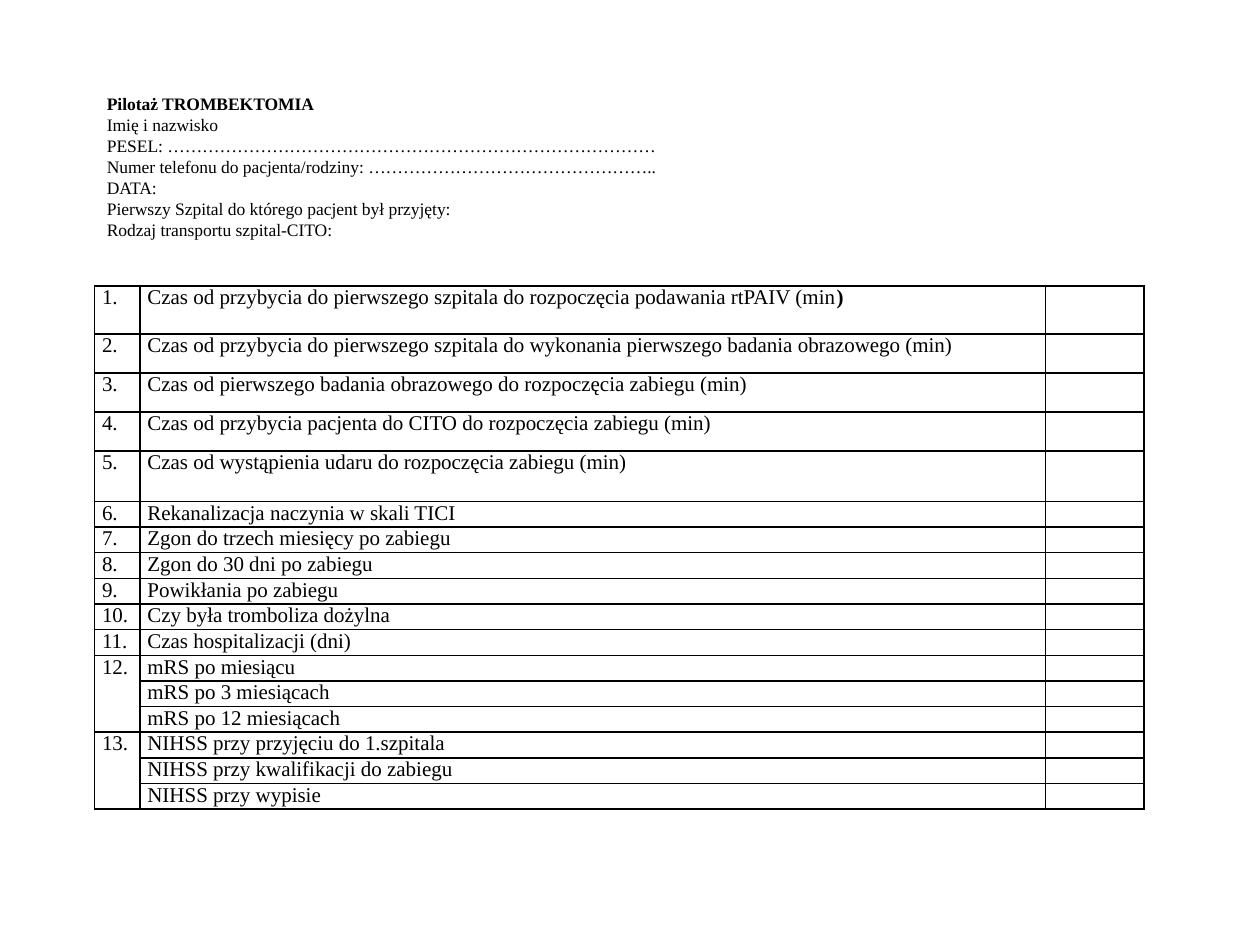
from lxml import etree
from pptx import Presentation
from pptx.dml.color import RGBColor
from pptx.enum.text import MSO_ANCHOR
from pptx.oxml.ns import qn
from pptx.util import Inches, Pt

TOP = MSO_ANCHOR.TOP
FONT = "Times New Roman"
COLORS = {"ink": "000000", "paper": "FFFFFF"}

HEADING = "Pilotaż TROMBEKTOMIA"
PATIENT_FIELDS = [
    "Imię i nazwisko",
    "PESEL: " + "…" * 76,
    "Numer telefonu do pacjenta/rodziny: " + "…" * 45 + "..",
    "DATA:",
    "Pierwszy Szpital do którego pacjent był przyjęty:",
    "Rodzaj transportu szpital-CITO:",
]
PATIENT_FIELDS[1] = "PESEL: …………………………………………………………………………"
PATIENT_FIELDS[2] = "Numer telefonu do pacjenta/rodziny: ………………………………………….."

ROW_HEIGHT = 0.2
QUESTIONS = [
    (0.38, ["Czas od przybycia do pierwszego szpitala do rozpoczęcia podawania rtPAIV (min)"]),
    (0.31, ["Czas od przybycia do pierwszego szpitala do wykonania pierwszego badania obrazowego (min)"]),
    (0.31, ["Czas od pierwszego badania obrazowego do rozpoczęcia zabiegu (min)"]),
    (0.31, ["Czas od przybycia pacjenta do CITO do rozpoczęcia zabiegu (min)"]),
    (0.4, ["Czas od wystąpienia udaru do rozpoczęcia zabiegu (min)"]),
    (ROW_HEIGHT, ["Rekanalizacja naczynia w skali TICI"]),
    (ROW_HEIGHT, ["Zgon do trzech miesięcy po zabiegu"]),
    (ROW_HEIGHT, ["Zgon do 30 dni po zabiegu"]),
    (ROW_HEIGHT, ["Powikłania po zabiegu"]),
    (ROW_HEIGHT, ["Czy była tromboliza dożylna"]),
    (ROW_HEIGHT, ["Czas hospitalizacji (dni)"]),
    (ROW_HEIGHT, ["mRS po miesiącu", "mRS po 3 miesiącach", "mRS po 12 miesiącach"]),
    (ROW_HEIGHT, ["NIHSS przy przyjęciu do 1.szpitala",
                  "NIHSS przy kwalifikacji do zabiegu",
                  "NIHSS przy wypisie"]),
]
BOLD_ENDING = "rtPAIV (min)"
COLUMN_WIDTHS = [0.36, 7.19, 0.78]


def add_text(p, text, size=12, bold=False, color="ink"):
    r = p.add_run()
    r.text = text
    r.font.name = FONT
    r.font.size = Pt(size)
    r.font.bold = bold
    r.font.color.rgb = RGBColor.from_string(COLORS[color])


def format_cell(cell):
    cell.margin_left = cell.margin_right = Inches(0.06)
    cell.margin_top = cell.margin_bottom = 0
    tcPr = cell._tc.get_or_add_tcPr()
    for side in ("lnL", "lnR", "lnT", "lnB"):
        ln = etree.SubElement(tcPr, qn(f"a:{side}"), w=str(Pt(1)))
        fill = etree.SubElement(ln, qn("a:solidFill"))
        etree.SubElement(fill, qn("a:srgbClr"), val=COLORS["ink"])
    cell.fill.solid()
    cell.fill.fore_color.rgb = RGBColor.from_string(COLORS["paper"])
    p = cell.text_frame.paragraphs[0]
    etree.SubElement(p._p, qn("a:endParaRPr"), sz="1200")


def add_patient_box(s):
    sp = s.shapes.add_textbox(Inches(0.75), Inches(0.69), Inches(8.74), Inches(1.58))
    tf = sp.text_frame
    tf.word_wrap = True
    tf.vertical_anchor = TOP
    add_text(tf.paragraphs[0], HEADING, size=10, bold=True)
    for field in PATIENT_FIELDS:
        add_text(tf.add_paragraph(), field, size=10)


def add_question_table(s):
    heights = [height for height, lines in QUESTIONS for _ in lines]
    table = s.shapes.add_table(
        len(heights), len(COLUMN_WIDTHS), Inches(0.75), Inches(2.27),
        Inches(sum(COLUMN_WIDTHS)), Inches(sum(heights))).table
    table.first_row = table.horz_banding = False
    for column, width in zip(table.columns, COLUMN_WIDTHS):
        column.width = Inches(width)
    for row, height in zip(table.rows, heights):
        row.height = Inches(height)
        for cell in row.cells:
            format_cell(cell)
    top = 0
    for number, (_, lines) in enumerate(QUESTIONS, 1):
        first = table.cell(top, 0)
        add_text(first.text_frame.paragraphs[0], f"{number}.")
        for i, line in enumerate(lines):
            p = table.cell(top + i, 1).text_frame.paragraphs[0]
            if line.endswith(BOLD_ENDING):
                add_text(p, line[:-1])
                add_text(p, line[-1], bold=True)
            else:
                add_text(p, line)
        if len(lines) > 1:
            first.merge(table.cell(top + len(lines) - 1, 0))
        top += len(lines)


def main():
    prs = Presentation()
    prs.slide_width, prs.slide_height = Inches(10), Inches(7.5)
    s = prs.slides.add_slide(prs.slide_layouts[6])
    add_question_table(s)
    add_patient_box(s)
    prs.save("out.pptx")


if __name__ == "__main__":
    main()
